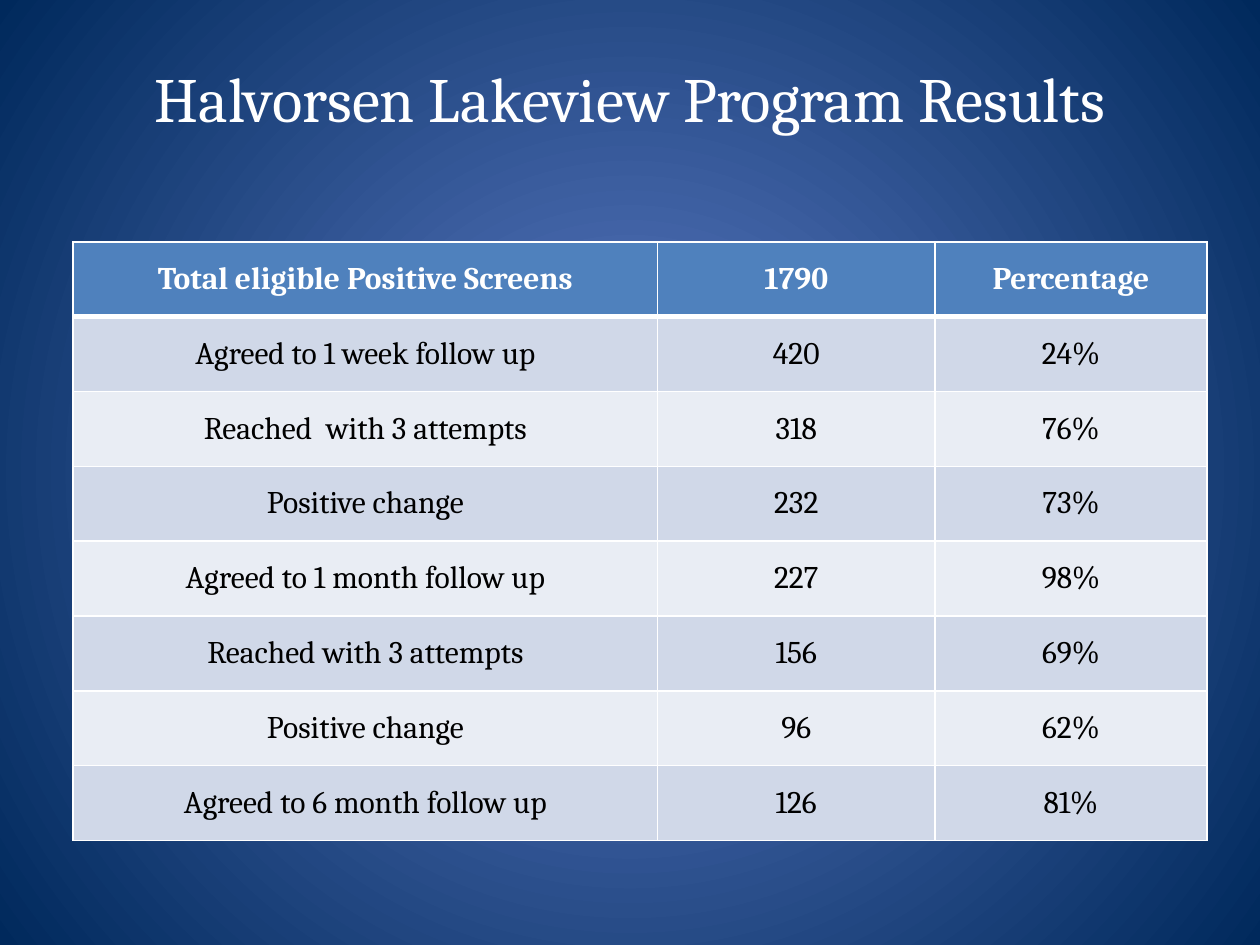
"""Build a one-slide summary of follow-up results as a table."""
from dataclasses import dataclass

from lxml.etree import SubElement
from pptx import Presentation
from pptx.dml.color import RGBColor as Rgb
from pptx.enum.text import MSO_ANCHOR as Anchor, PP_ALIGN as Align
from pptx.oxml import parse_xml
from pptx.oxml.ns import nsdecls, qn
from pptx.util import Inches, Pt


@dataclass(frozen=True)
class Theme:
    font: str = "Cambria"
    title_size: int = 36
    table_size: int = 18
    glow: str = "5E7CC5"
    edge: str = "00295C"
    white: str = "FFFFFF"
    ink: str = "000000"
    header: str = "4F81BD"
    bands: tuple = ("D0D8E8", "E9EDF4")
    rule: int = 1
    header_rule: int = 3


RESULTS = [
    ("Total eligible Positive Screens", "1790", "Percentage"),
    ("Agreed to 1 week follow up", "420", "24%"),
    ("Reached  with 3 attempts", "318", "76%"),
    ("Positive change", "232", "73%"),
    ("Agreed to 1 month follow up", "227", "98%"),
    ("Reached with 3 attempts", "156", "69%"),
    ("Positive change", "96", "62%"),
    ("Agreed to 6 month follow up", "126", "81%"),
]


class ResultsSlide:
    def __init__(self, slide, theme):
        self.slide = slide
        self.theme = theme

    def background(self):
        fill = self.slide.background.fill
        fill.gradient()
        for stop, color in zip(fill.gradient_stops, (self.theme.glow, self.theme.edge)):
            stop.color.rgb = Rgb.from_string(color)
        gradient = next(self.slide.element.iter(qn("a:gradFill")))
        gradient.remove(gradient.find(qn("a:lin")))
        circle = SubElement(gradient, qn("a:path"), {"path": "circle"})
        SubElement(circle, qn("a:fillToRect"), {side: "50000" for side in "ltrb"})

    def text(self, frame, words, size, color, bold=False):
        paragraph = frame.paragraphs[0]
        paragraph.alignment = Align.CENTER
        run = paragraph.add_run()
        run.text = words
        style = {"name": self.theme.font, "size": Pt(size), "bold": bold}
        for attribute, value in style.items():
            setattr(run.font, attribute, value)
        run.font.color.rgb = Rgb.from_string(color)

    def title(self, words, left, top, width, height):
        frame = self.slide.shapes.add_textbox(
            Inches(left), Inches(top), Inches(width), Inches(height)).text_frame
        layout = {"word_wrap": True, "vertical_anchor": Anchor.MIDDLE}
        for attribute, value in layout.items():
            setattr(frame, attribute, value)
        self.text(frame, words, self.theme.title_size, self.theme.white)

    def borders(self, cell, widths):
        properties = cell._tc.get_or_add_tcPr()
        for position, (side, width) in enumerate(widths.items()):
            properties.insert(position, parse_xml(
                f'<a:ln{side} {nsdecls("a")} w="{Pt(width)}"><a:solidFill>'
                f'<a:srgbClr val="{self.theme.white}"/></a:solidFill></a:ln{side}>'))

    def cell(self, cell, words, row):
        theme = self.theme
        is_header = row == 0
        layout = {
            "vertical_anchor": Anchor.MIDDLE,
            "margin_left": Inches(0.11), "margin_right": Inches(0.11),
            "margin_top": Inches(0.05), "margin_bottom": Inches(0.05),
        }
        for attribute, value in layout.items():
            setattr(cell, attribute, value)
        self.borders(cell, {
            "L": theme.rule, "R": theme.rule,
            "T": theme.header_rule if row == 1 else theme.rule,
            "B": theme.header_rule if is_header else theme.rule,
        })
        cell.fill.solid()
        cell.fill.fore_color.rgb = Rgb.from_string(
            theme.header if is_header else theme.bands[(row - 1) % 2])
        self.text(cell.text_frame, words, theme.table_size,
                  theme.white if is_header else theme.ink, is_header)

    def table(self, records, left, top, height, widths):
        table = self.slide.shapes.add_table(
            len(records), len(widths), Inches(left), Inches(top),
            Inches(sum(widths)), Inches(height)).table
        for column, width in zip(table.columns, widths):
            column.width = Inches(width)
        for row, record in enumerate(records):
            for column, words in enumerate(record):
                self.cell(table.cell(row, column), words, row)


def main():
    deck = Presentation()
    deck.slide_width, deck.slide_height = Inches(10), Inches(7.5)
    results = ResultsSlide(deck.slides.add_slide(deck.slide_layouts[6]), Theme())
    results.background()
    results.title("Halvorsen Lakeview Program Results", 0.5, 0.3, 9, 0.95)
    results.table(RESULTS, 0.58, 1.92, 4.75, (4.64, 2.2, 2.16))
    deck.save("out.pptx")


if __name__ == "__main__":
    main()
